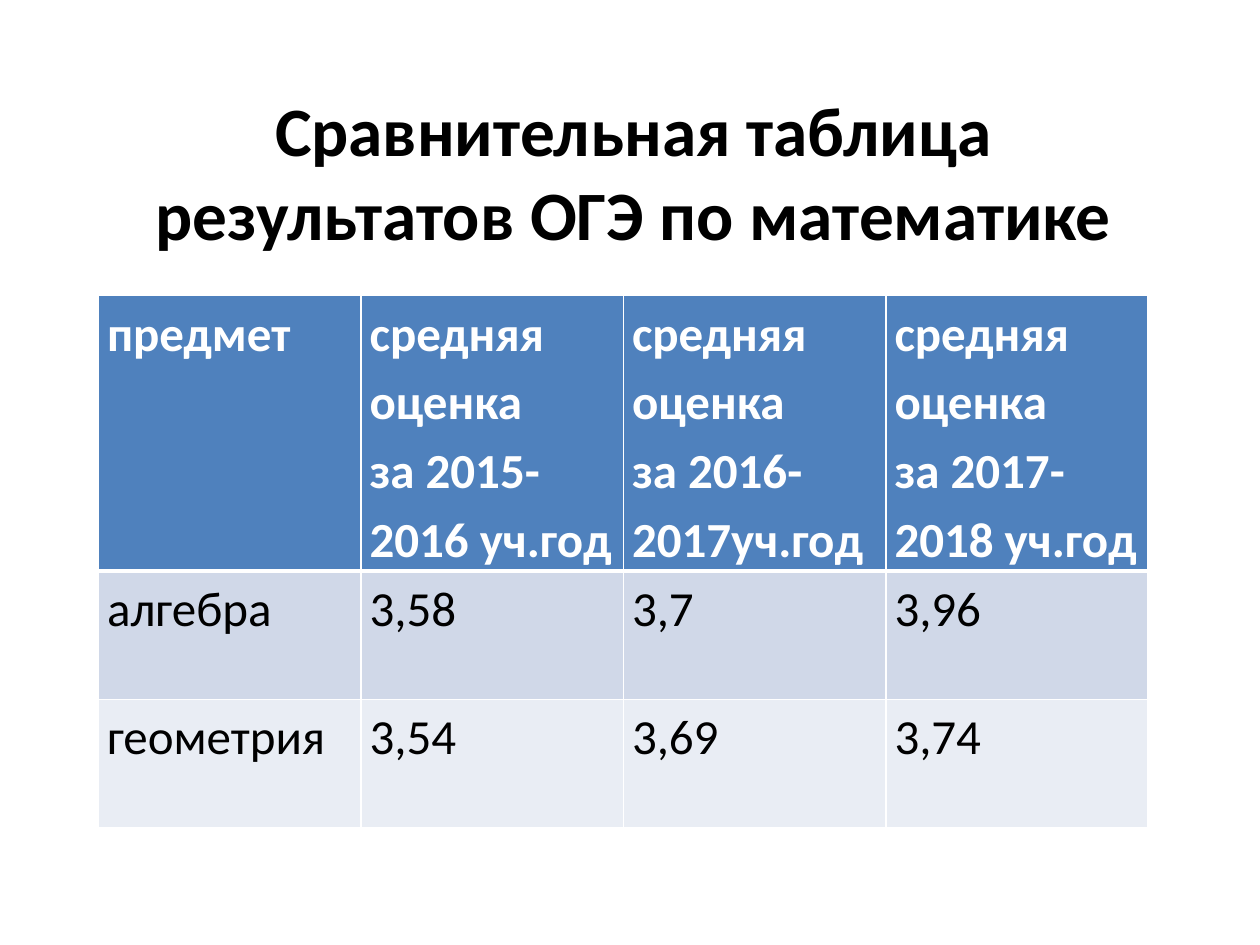
"""Build a slide comparing average mathematics exam grades by school year."""
from dataclasses import dataclass

from lxml import etree
from pptx import Presentation
from pptx.dml.color import RGBColor
from pptx.enum import text as t
from pptx.oxml import ns
from pptx.util import Pt

BLACK = RGBColor(0x00, 0x00, 0x00)
WHITE = RGBColor(0xFF, 0xFF, 0xFF)
HEADER_BLUE = RGBColor(0x4F, 0x81, 0xBD)
BAND_DARK = RGBColor(0xD0, 0xD8, 0xE8)
BAND_LIGHT = RGBColor(0xE9, 0xED, 0xF4)
THIN, THICK = Pt(1), Pt(3)
COLUMN_WIDTH = Pt(150)


@dataclass(frozen=True)
class GradeRow:
    cells: tuple[str, ...]
    height: Pt
    fill: RGBColor
    color: RGBColor = BLACK
    bold: bool = False
    top: Pt = THIN
    bottom: Pt = THIN


YEARS = ("2015-2016 уч.год", "2016-2017уч.год", "2017-2018 уч.год")
ROWS = (
    GradeRow(("предмет", *(f"средняя оценка\nза {year}" for year in YEARS)),
             Pt(154), HEADER_BLUE, WHITE, bold=True, bottom=THICK),
    GradeRow(("алгебра", "3,58", "3,7", "3,96"), Pt(73.4), BAND_DARK, top=THICK),
    GradeRow(("геометрия", "3,54", "3,69", "3,74"), Pt(73.4), BAND_LIGHT),
)


def write_text(frame, content: str, *, size: float, color: RGBColor, bold: bool = False,
               align=t.PP_ALIGN.LEFT, spacing: float = 1.0) -> None:
    frame.text = content
    for paragraph in frame.paragraphs:
        paragraph.alignment = align
        paragraph.line_spacing = spacing
        for run in paragraph.runs:
            run.font.name = "Calibri"
            run.font.size = Pt(size)
            run.font.bold = bold
            run.font.color.rgb = color


def draw_borders(cell, row: GradeRow) -> None:
    properties = cell._tc.get_or_add_tcPr()
    for side, width in (("L", THIN), ("R", THIN), ("T", row.top), ("B", row.bottom)):
        line = etree.SubElement(properties, ns.qn(f"a:ln{side}"), w=str(int(width)))
        fill = etree.SubElement(line, ns.qn("a:solidFill"))
        etree.SubElement(fill, ns.qn("a:srgbClr"), val=str(WHITE))


def draw_cell(cell, content: str, row: GradeRow) -> None:
    draw_borders(cell, row)
    cell.fill.solid()
    cell.fill.fore_color.rgb = row.fill
    cell.margin_left = cell.margin_right = Pt(5)
    cell.margin_top = cell.margin_bottom = 0
    write_text(cell.text_frame, content, size=28, color=row.color, bold=row.bold,
               spacing=1.15)


def draw_title(title) -> None:
    title.left, title.top, title.width, title.height = Pt(56), Pt(39.6), Pt(612), Pt(116)
    title.text_frame.vertical_anchor = t.MSO_ANCHOR.MIDDLE
    title.text_frame.auto_size = t.MSO_AUTO_SIZE.NONE
    write_text(title.text_frame, "Сравнительная таблица результатов ОГЭ по математике",
               size=39.6, color=BLACK, bold=True, align=t.PP_ALIGN.CENTER)


def draw_grades(slide) -> None:
    column_count = len(ROWS[0].cells)
    grades = slide.shapes.add_table(
        len(ROWS), column_count, Pt(56.2), Pt(168.8), COLUMN_WIDTH * column_count,
        sum(row.height for row in ROWS)).table
    for column in grades.columns:
        column.width = COLUMN_WIDTH
    for row_index, row in enumerate(ROWS):
        grades.rows[row_index].height = row.height
        for column_index, content in enumerate(row.cells):
            draw_cell(grades.cell(row_index, column_index), content, row)


def main() -> None:
    presentation = Presentation()
    presentation.slide_width, presentation.slide_height = Pt(720), Pt(540)
    slide = presentation.slides.add_slide(presentation.slide_layouts[0])
    subtitle = slide.placeholders[1].element
    subtitle.getparent().remove(subtitle)
    draw_title(slide.shapes.title)
    draw_grades(slide)
    presentation.save("out.pptx")


if __name__ == "__main__":
    main()
